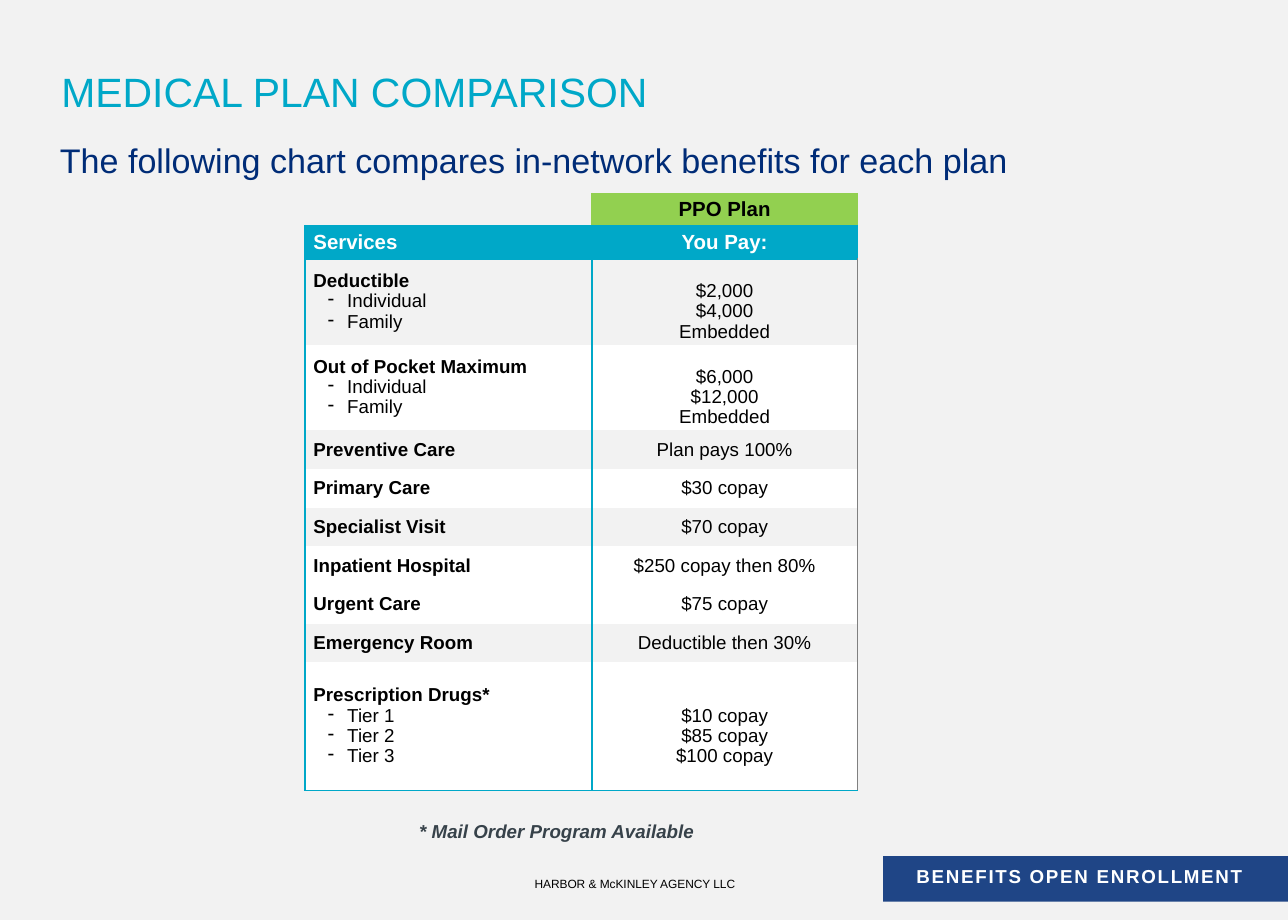
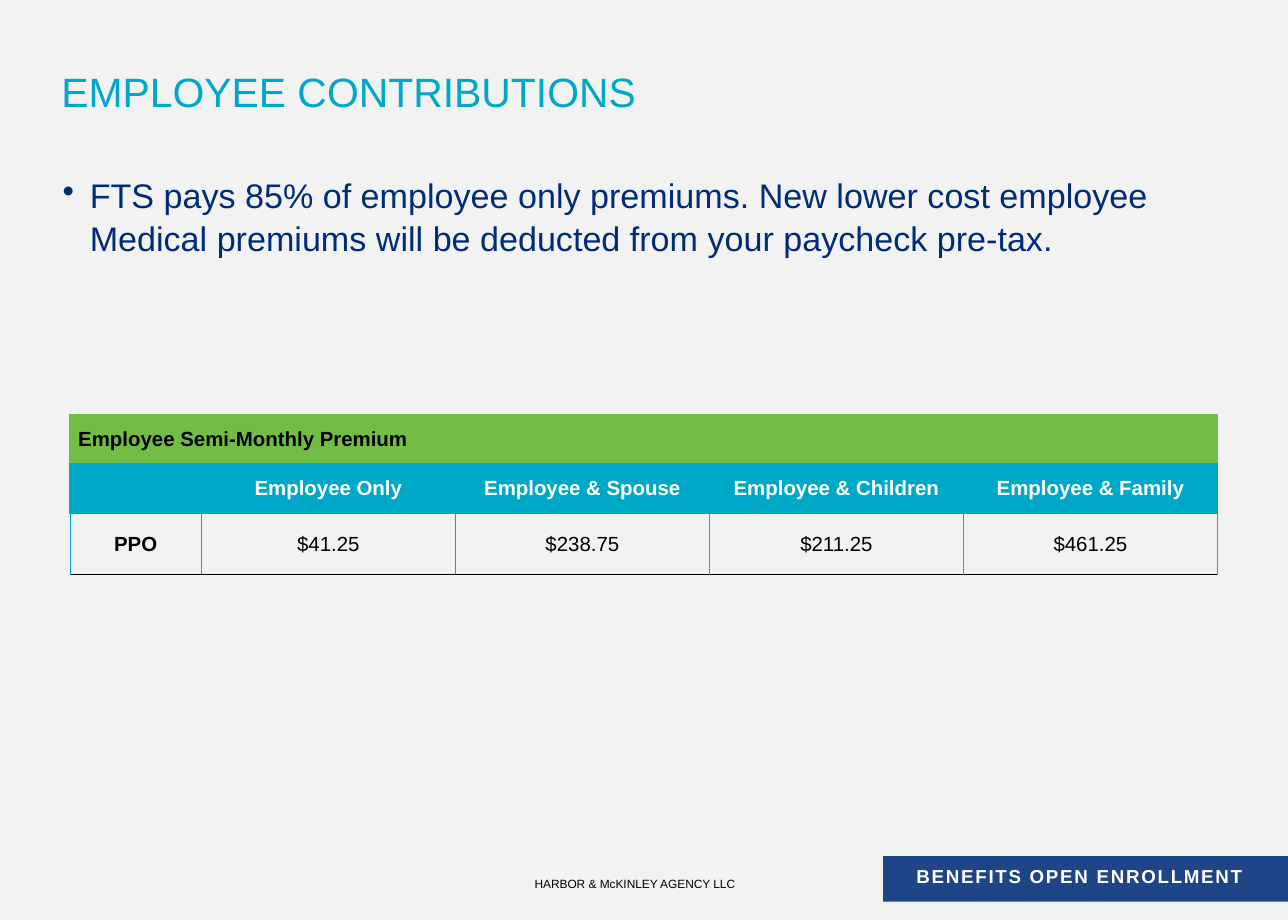
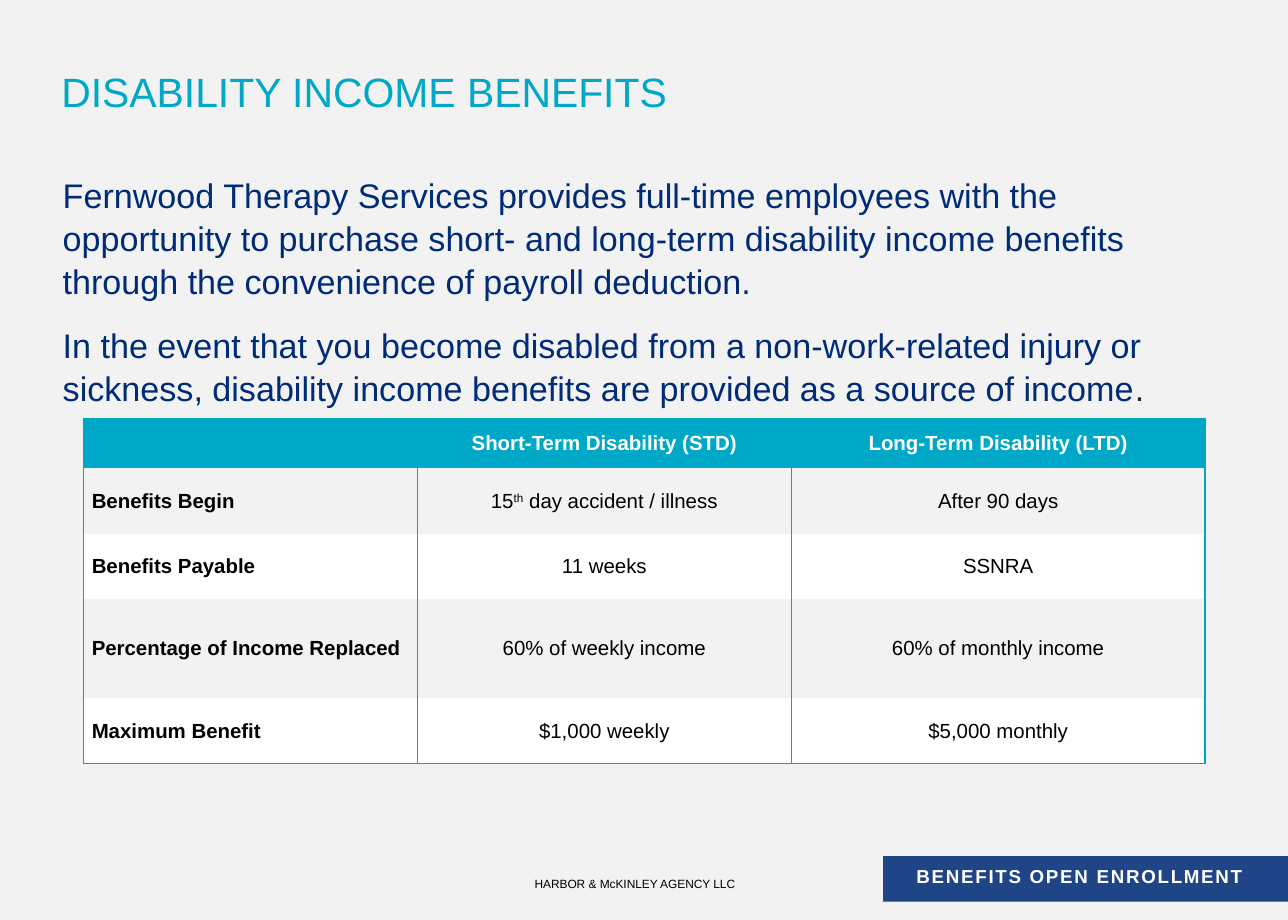
from lxml.etree import SubElement
from pptx import Presentation
from pptx.dml.color import RGBColor
from pptx.enum.shapes import MSO_SHAPE
from pptx.enum.text import MSO_ANCHOR as Anchor, MSO_AUTO_SIZE as Fit, PP_ALIGN as Align
from pptx.oxml.ns import qn
from pptx.util import Cm, Pt

# Colours and fonts
CYAN = RGBColor(0x00, 0xA8, 0xC8)
NAVY = RGBColor(0x00, 0x2C, 0x77)
LIME = RGBColor(0x92, 0xD0, 0x50)
GREEN = RGBColor(0x72, 0xBE, 0x44)
PALE = RGBColor(0xF2, 0xF2, 0xF2)
WHITE = RGBColor(0xFF, 0xFF, 0xFF)
BLACK = RGBColor(0x00, 0x00, 0x00)
GREY = RGBColor(0x80, 0x80, 0x80)
SLATE = RGBColor(0x37, 0x42, 0x4A)
DARK = RGBColor(0x26, 0x26, 0x26)
FONT = "Arial"
NO_GRID = "{2D5ABB26-0587-4C30-8999-92F81FD0307C}"

# Shared wording
AGENCY = "HARBOR & McKINLEY AGENCY LLC"
BANNER = "BENEFITS OPEN ENROLLMENT"

# Content: lengths in cm; a row is (height, fill, cells); ^ marks superscript;
# an edge is the (colour, points) of a vertical line in the body rows
THICK, THIN, HAIR = (CYAN, 1), (CYAN, 0.5), (GREY, 0.5)
DECK = [
    {
        "title": "MEDICAL PLAN COMPARISON",
        "body": ["The following chart compares in-network benefits for each plan"],
        "box": (1.24, 3.05, 24.13, 1), "space": 0.8,
        "note": "* Mail Order Program Available",
        "table": {
            "at": (6.32, 4.01), "cols": [5.94, 5.49], "size": 11,
            "edges": [THICK, THICK, HAIR], "foot": THICK,
            "rows": [
                (0.66, LIME, ["", "PPO Plan"]),
                (0.69, CYAN, ["Services", "You Pay:"]),
                (1.74, PALE, [["Deductible", "Individual", "Family"],
                              ["$2,000", "$4,000", "Embedded"]]),
                (1.73, WHITE, [["Out of Pocket Maximum", "Individual", "Family"],
                               ["$6,000", "$12,000", "Embedded"]]),
                (0.8, PALE, ["Preventive Care", "Plan pays 100%"]),
                (0.8, WHITE, ["Primary Care", "$30 copay"]),
                (0.8, PALE, ["Specialist Visit", "$70 copay"]),
                (0.8, WHITE, ["Inpatient Hospital", "$250 copay then 80%"]),
                (0.8, WHITE, ["Urgent Care", "$75 copay"]),
                (0.8, PALE, ["Emergency Room", "Deductible then 30%"]),
                (2.65, WHITE, [["Prescription Drugs*", "Tier 1", "Tier 2", "Tier 3"],
                               ["$10 copay", "$85 copay", "$100 copay"]]),
            ],
        },
    },
    {
        "title": "EMPLOYEE CONTRIBUTIONS",
        "body": ["FTS pays 85% of employee only premiums. New lower cost employee "
                 "Medical premiums will be deducted from your paycheck pre-tax."],
        "box": (1.3, 3.58, 24.13, 4.27), "space": 1.05, "bullet": True,
        "table": {
            "at": (1.45, 8.59), "cols": [2.72] + [5.26] * 4, "size": 12,
            "edges": [THIN, THICK, THICK, HAIR, HAIR, HAIR], "foot": (BLACK, 1),
            "middle": True,
            "rows": [
                (1.02, GREEN, ["Employee Semi-Monthly Premium"]),
                (1.02, CYAN, ["", "Employee Only", "Employee & Spouse",
                              "Employee & Children", "Employee & Family"]),
                (1.27, PALE, ["PPO", "$41.25", "$238.75", "$211.25", "$461.25"]),
            ],
        },
    },
    {
        "title": "DISABILITY INCOME BENEFITS",
        "body": ["Fernwood Therapy Services provides full-time employees with the "
                 "opportunity to purchase short- and long-term disability income "
                 "benefits through the convenience of payroll deduction.",
                 "In the event that you become disabled from a non-work-related "
                 "injury or sickness, disability income benefits are provided as "
                 "a source of income"],
        "box": (1.3, 3.58, 23.47, 4.9), "space": 1.05, "end": ".",
        "table": {
            "at": (1.73, 8.66), "cols": [6.91, 7.75, 8.56], "size": 12,
            "edges": [THICK, THICK, THIN, THICK], "foot": THICK,
            "rows": [
                (1.04, CYAN, ["", "Short-Term Disability (STD)",
                              "Long-Term Disability (LTD)"]),
                (1.35, PALE, ["Benefits Begin", "15^th^ day accident / illness",
                              "After 90 days"]),
                (1.35, WHITE, ["Benefits Payable", "11 weeks", "SSNRA"]),
                (2.06, PALE, ["Percentage of Income Replaced",
                              "60% of weekly income", "60% of monthly income"]),
                (1.35, WHITE, ["Maximum Benefit", "$1,000 weekly", "$5,000 monthly"]),
            ],
        },
    },
]


# Text helpers
def style(para, size, ink, bold=False, align=Align.LEFT):
    font = para.font
    font.name, font.size, font.bold = FONT, Pt(size), bold
    font.color.rgb = ink
    para.alignment = align


def pad(frame, left=0, top=0, right=0, bottom=0):
    frame.margin_left, frame.margin_top = Cm(left), Cm(top)
    frame.margin_right, frame.margin_bottom = Cm(right), Cm(bottom)


def bullet(para, sign, left, hang):
    props = para._p.get_or_add_pPr()
    props.set("marL", str(Cm(left)))
    props.set("indent", str(-Cm(hang)))
    mark = props.makeelement(qn("a:buChar"), {"char": sign})
    fonts = props.find(qn("a:defRPr"))
    if fonts is None:
        props.append(mark)
    else:
        fonts.addprevious(mark)


def add_text(slide, box, lines, size, ink, bold=False):
    frame = slide.shapes.add_textbox(*map(Cm, box)).text_frame
    frame.word_wrap = True
    pad(frame)
    for i, line in enumerate(lines):
        para = frame.add_paragraph() if i else frame.paragraphs[0]
        para.add_run().text = line
        style(para, size, ink, bold)
    return frame


# Shared parts
def add_title(slide, text):
    title = slide.shapes.title
    title.left, title.top, title.width, title.height = map(Cm, (1.27, 1.42, 24.13, 1.93))
    frame = title.text_frame
    frame.text = text
    frame.auto_size, frame.vertical_anchor = Fit.NONE, Anchor.TOP
    pad(frame, 0, 0.13, 0.25, 0.13)
    para = frame.paragraphs[0]
    para.line_spacing = 0.83
    style(para, 24, CYAN)


def add_footer(slide):
    frame = add_text(slide, (11.07, 18.16, 5.5, 0.28), [AGENCY], 7, BLACK)
    frame.vertical_anchor = Anchor.BOTTOM

    band = slide.shapes.add_shape(MSO_SHAPE.RECTANGLE, *map(Cm, (18.29, 17.73, 8.38, 0.94)))
    band.shadow.inherit = False
    band.line.fill.background()
    band.fill.solid()
    band.fill.fore_color.rgb = NAVY
    tint = band.fill._xPr.find(qn("a:solidFill"))[0]
    SubElement(tint, qn("a:alpha"), val="87000")
    frame = band.text_frame
    frame.vertical_anchor = Anchor.MIDDLE
    pad(frame, 0, 0, 0.25, 0.13)
    para = frame.paragraphs[0]
    run = para.add_run()
    run.text = BANNER
    run._r.get_or_add_rPr().set("spc", "100")
    style(para, 11, WHITE, True, Align.CENTER)


# Tables
def rule(cell, side, ink, width):
    line = SubElement(cell._tc.get_or_add_tcPr(), qn("a:ln" + side), w=str(Pt(width)))
    SubElement(SubElement(line, qn("a:solidFill")), qn("a:srgbClr"), val=str(ink))


def fill_cell(cell, text, col, head, ink, size, align):
    cell.vertical_anchor = Anchor.MIDDLE
    lines = [text] if isinstance(text, str) else text
    stack = len(lines) > 1
    # stacked values start one line lower, beside their labels
    pad(cell, 0.17, 0.42 if stack and col else 0, 0.17)
    frame = cell.text_frame
    for i, line in enumerate(lines):
        para = frame.add_paragraph() if i else frame.paragraphs[0]
        for n, part in enumerate(line.split("^") if line else []):
            run = para.add_run()
            run.text = part
            if n % 2:
                run._r.get_or_add_rPr().set("baseline", "30000")
        style(para, size, ink, head or (col == 0 and i == 0), align)
        if stack:
            para.line_spacing = 0.97
        if i and col == 0:
            bullet(para, "-", 0.7, 0.4)
        if not line:
            SubElement(para._p, qn("a:endParaRPr"), sz=str(size * 100))


def add_grid(slide, data):
    rows, cols, edges = data["rows"], data["cols"], data["edges"]
    size = sum(cols), sum(row[0] for row in rows)
    frame = slide.shapes.add_table(len(rows), len(cols), *map(Cm, data["at"] + size))
    table = frame.table
    table.first_row = table.horz_banding = False
    table._tbl.tblPr.find(qn("a:tableStyleId")).text = NO_GRID
    for col, width in zip(table.columns, cols):
        col.width = Cm(width)

    for r, (height, fill, texts) in enumerate(rows):
        table.rows[r].height = Cm(height)
        head = fill in (LIME, GREEN, CYAN)
        if len(texts) == 1:
            table.cell(r, 0).merge(table.cell(r, len(cols) - 1))
        for c, text in enumerate(texts):
            cell = table.cell(r, c)
            centre = c > 0 or (data.get("middle") and not head)
            fill_cell(cell, text, c, head, WHITE if fill == CYAN else BLACK,
                      12 if head else data["size"],
                      Align.CENTER if centre else Align.LEFT)
            if fill == LIME and not text:
                continue
            if head:
                for side in "LRT":
                    rule(cell, side, fill, 1)
            else:
                rule(cell, "L", *edges[c])
                rule(cell, "R", *edges[c + 1])
                if r == len(rows) - 1:
                    rule(cell, "B", *data["foot"])
            cell.fill.solid()
            cell.fill.fore_color.rgb = fill


# Slides
def add_page(prs, page):
    slide = prs.slides.add_slide(prs.slide_layouts[5])
    add_footer(slide)
    add_title(slide, page["title"])
    frame = add_text(slide, page["box"], page["body"], 20, NAVY)
    for para in frame.paragraphs:
        para.line_spacing = page["space"]
        para.space_after = Pt(12)
        if page.get("bullet"):
            bullet(para, "•", 0.56, 0.56)
    if "end" in page:
        run = frame.paragraphs[-1].add_run()
        run.text = page["end"]
        run.font.color.rgb = DARK
    add_grid(slide, page["table"])
    if "note" in page:
        note = add_text(slide, (8.68, 16.97, 11.6, 0.5), [page["note"]], 11, SLATE, True)
        note.paragraphs[0].font.italic = True


def main():
    prs = Presentation()
    prs.slide_width, prs.slide_height = Cm(26.67), Cm(19.05)
    back = prs.slide_master.background.fill
    back.solid()
    back.fore_color.rgb = PALE
    for page in DECK:
        add_page(prs, page)
    prs.save("out.pptx")


if __name__ == "__main__":
    main()
